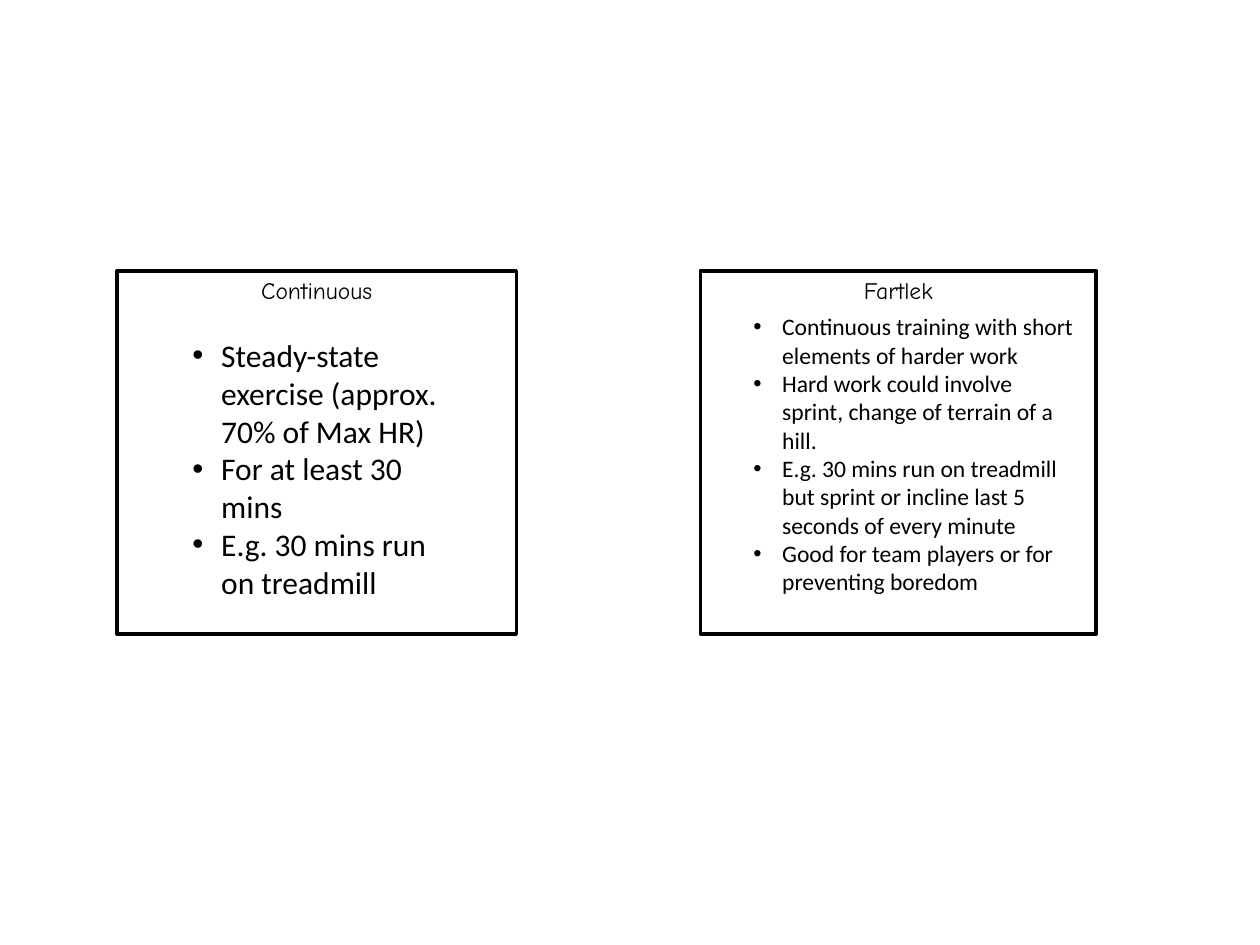
from dataclasses import dataclass

from lxml.etree import SubElement
from pptx import Presentation
from pptx.dml.color import RGBColor
from pptx.enum.shapes import MSO_SHAPE as Shape
from pptx.enum.text import MSO_ANCHOR as Anchor, MSO_AUTO_SIZE as AutoSize, PP_ALIGN as Align
from pptx.oxml.ns import qn
from pptx.util import Cm, Pt


@dataclass(frozen=True)
class Theme:
    ink: RGBColor = RGBColor(0, 0, 0)
    paper: RGBColor = RGBColor(255, 255, 255)
    title_font: str = "Comic Neue"
    body_font: str = "Calibri"
    small: float = 13.5
    large: float = 18
    border: float = 2


class CardSlide:
    """Draws training cards on one slide in the style of a theme."""

    def __init__(self, slide, theme):
        self.s = slide
        self.theme = theme

    def style_runs(self, p, font, size):
        for r in p.runs:
            r.font.name = font
            r.font.size = Pt(size)
            r.font.color.rgb = self.theme.ink

    def card(self, box, title):
        sp = self.s.shapes.add_shape(Shape.RECTANGLE, *map(Cm, box))
        sp.shadow.inherit = False
        sp.fill.solid()
        sp.fill.fore_color.rgb = self.theme.paper
        sp.line.color.rgb = self.theme.ink
        sp.line.width = Pt(self.theme.border)
        tf = sp.text_frame
        tf.margin_left = tf.margin_right = Cm(0.18)
        tf.margin_top = tf.margin_bottom = Cm(0.1)
        tf.vertical_anchor = Anchor.TOP
        tf.text = title
        p = tf.paragraphs[0]
        p.alignment = Align.CENTER
        p.space_after = Pt(6)
        self.style_runs(p, self.theme.title_font, self.theme.small)

    def bullets(self, box, items, size):
        tf = self.s.shapes.add_textbox(*map(Cm, box)).text_frame
        tf.word_wrap = True
        tf.auto_size = AutoSize.SHAPE_TO_FIT_TEXT
        tf.text = "\n".join(items)
        for p in tf.paragraphs:
            pPr = p._p.get_or_add_pPr()
            pPr.set("marL", str(Cm(0.58)))
            pPr.set("indent", str(-Cm(0.58)))
            SubElement(pPr, qn("a:buFont"), typeface="Arial")
            SubElement(pPr, qn("a:buChar"), char="•")
            self.style_runs(p, self.theme.body_font, size)


def main():
    prs = Presentation()
    prs.slide_width, prs.slide_height = Cm(25.4), Cm(19.05)
    theme = Theme()
    cards = CardSlide(prs.slides.add_slide(prs.slide_layouts[6]), theme)

    top, height = 5.46, 7.32
    cards.card((2.36, top, 8.05, height), "Continuous")
    cards.card((14.12, top, 7.98, height), "Fartlek")
    cards.bullets((3.63, 6.65, 5.82, 5.64), [
        "Steady-state exercise (approx. 70% of Max HR)",
        "For at least 30 mins",
        "E.g. 30 mins run on treadmill",
    ], theme.large)
    cards.bullets((14.94, 6.17, 6.96, 7.19), [
        "Continuous training with short elements of harder work",
        "Hard work could involve sprint, change of terrain of a hill.",
        "E.g. 30 mins run on treadmill but sprint or incline last 5 seconds of every minute",
        "Good for team players or for preventing boredom",
    ], theme.small)
    prs.save("out.pptx")


if __name__ == "__main__":
    main()
